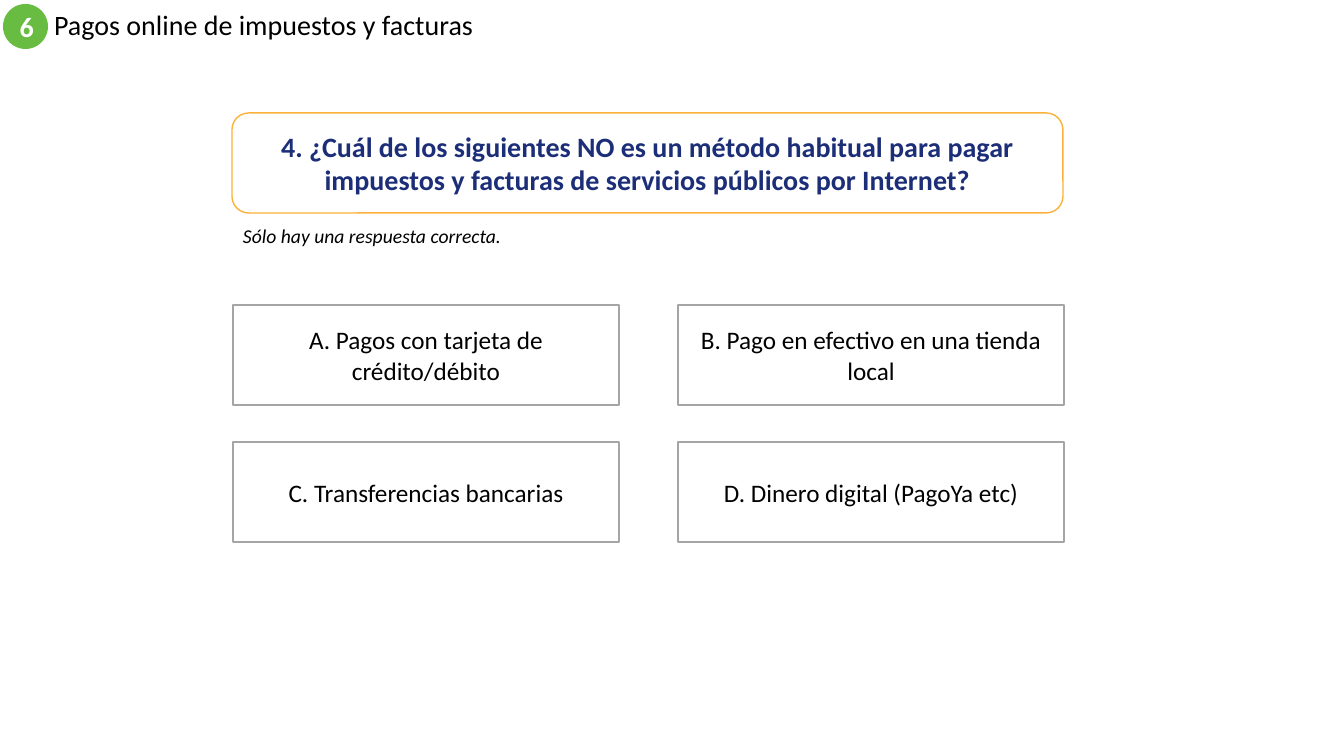
from collections import namedtuple
from dataclasses import dataclass

from pptx import Presentation
from pptx.dml.color import RGBColor as Rgb
from pptx.enum.shapes import MSO_SHAPE as Kind
from pptx.enum.text import MSO_ANCHOR as Anchor, MSO_AUTO_SIZE as Fit, PP_ALIGN as Align
from pptx.util import Emu, Pt

Box = namedtuple("Box", "x y w h")
Style = namedtuple("Style", "size color bold italic", defaults=(False, False))


@dataclass(frozen=True)
class Theme:
    """Colours, font and type styles of the quiz."""
    font: str = "Calibri"
    white: str = "FFFFFF"
    green: str = "68BC42"
    amber: str = "FCB13A"
    gray: str = "A5A5A5"
    title: Style = Style(20, "000000")
    badge: Style = Style(20, "FFFFFF", True)
    query: Style = Style(20, "1C2E78", True)
    hint: Style = Style(14, "000000", False, True)
    answer: Style = Style(18, "000000")


THEME = Theme()


def px(count):
    """Turn pixels into EMU at 100.8 pixels to the inch."""
    return Emu(round(count * 9144000 / 1008))


def write(shape, text, style, align=Align.CENTER, anchor=Anchor.MIDDLE):
    """Put one styled run into a shape."""
    frame = shape.text_frame
    frame.word_wrap = True
    frame.auto_size = Fit.NONE
    frame.vertical_anchor = anchor
    frame.margin_left = frame.margin_right = px(10)
    frame.margin_top = frame.margin_bottom = px(5)
    para = frame.paragraphs[0]
    para.alignment = align
    run = para.add_run()
    run.text = text
    font = run.font
    font.name, font.size = THEME.font, Pt(style.size)
    font.bold, font.italic = style.bold, style.italic
    font.color.rgb = Rgb.from_string(style.color)
    return para


def panel(slide, kind, box, fill, line=None, width=1):
    """Add a flat shape with a fill and an optional outline."""
    shape = slide.shapes.add_shape(kind, *map(px, box))
    shape.shadow.inherit = False
    shape.fill.solid()
    shape.fill.fore_color.rgb = Rgb.from_string(fill)
    if line:
        shape.line.color.rgb = Rgb.from_string(line)
        shape.line.width = Pt(width)
    else:
        shape.line.fill.background()
    return shape


def header(slide, box, number, text):
    """Place the numbered badge and the title beside it."""
    title = slide.shapes.title
    title.left, title.top = px(box.x + 41), px(box.y)
    title.width, title.height = px(box.w - 41), px(box.h)
    write(title, text, THEME.title, Align.LEFT).line_spacing = 0.9
    badge = panel(slide, Kind.OVAL, Box(box.x, box.y, box.h, box.h), THEME.green)
    write(badge, number, THEME.badge)


def question(slide, box, text, hint):
    """Place the framed question with its hint below."""
    frame = panel(slide, Kind.ROUNDED_RECTANGLE, Box(box.x, box.y, box.w, 100),
                  THEME.white, THEME.amber)
    write(frame, text, THEME.query)
    note = slide.shapes.add_textbox(*map(px, (box.x + 1, box.y + 106, 329, box.h - 106)))
    write(note, hint, THEME.hint, Align.LEFT, Anchor.TOP)


def answers(slide, box, texts):
    """Place the answers in a grid of two columns."""
    wide, high = 386, 100
    for index, text in enumerate(texts):
        row, col = divmod(index, 2)
        cell = Box(box.x + col * (box.w - wide), box.y + row * (box.h - high), wide, high)
        write(panel(slide, Kind.RECTANGLE, cell, THEME.white, THEME.gray, 2),
              text, THEME.answer)


def main():
    """Build and save the quiz slide."""
    deck = Presentation()
    deck.slide_width, deck.slide_height = px(1344), px(756)
    slide = deck.slides.add_slide(deck.slide_layouts[5])
    header(slide, Box(3, 4, 848, 45), "6", "Pagos online de impuestos y facturas")
    question(slide, Box(232, 113, 831, 140),
             "4. ¿Cuál de los siguientes NO es un método habitual para pagar "
             "impuestos y facturas de servicios públicos por Internet?",
             "Sólo hay una respuesta correcta.")
    answers(slide, Box(233, 305, 831, 237), [
        "A. Pagos con tarjeta de crédito/débito",
        "B. Pago en efectivo en una tienda local",
        "C. Transferencias bancarias",
        "D. Dinero digital (PagoYa etc)",
    ])
    deck.save("out.pptx")


if __name__ == "__main__":
    main()
